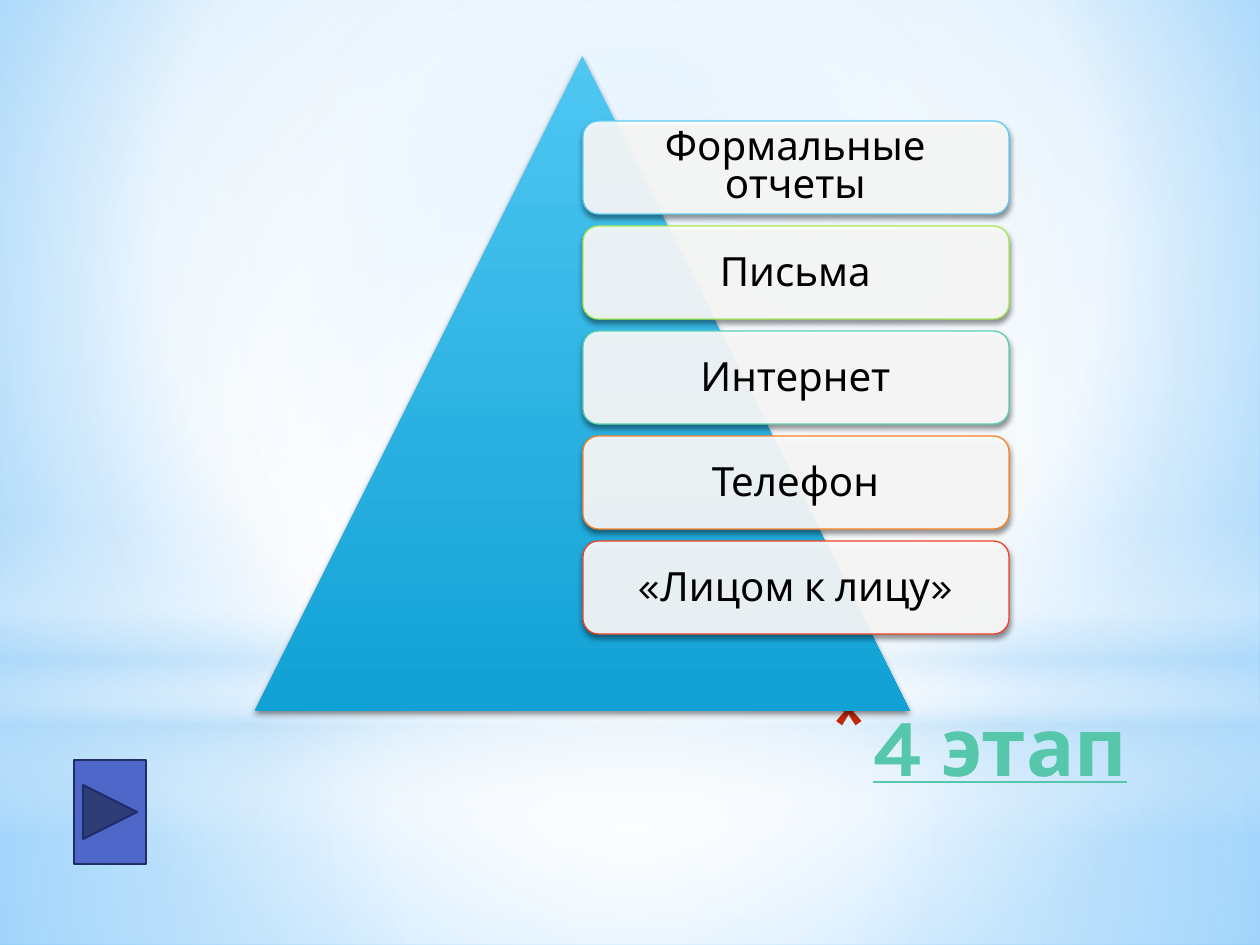
from lxml.etree import SubElement
from pptx import Presentation
from pptx.dml.color import RGBColor
from pptx.enum.shapes import MSO_SHAPE
from pptx.enum.text import MSO_ANCHOR, MSO_AUTO_SIZE, PP_ALIGN
from pptx.oxml.ns import qn
from pptx.util import Emu, Pt

WIDE, HIGH = 1260, 945
SCALE = 914400 / 126

WHITE = RGBColor(0xFF, 0xFF, 0xFF)
BLACK = RGBColor(0, 0, 0)
PALE = RGBColor(0xB4, 0xDC, 0xFA)
LIGHT = RGBColor(0x9E, 0xD5, 0xFF)
SKY = RGBColor(0x5B, 0xB9, 0xFF)
CYAN = RGBColor(0x4E, 0xC7, 0xF2)
DEEP = RGBColor(0x11, 0xA1, 0xD4)
MINT = RGBColor(0x56, 0xC7, 0xAA)
CRIMSON = RGBColor(0xC3, 0x26, 0x0C)
INDIGO = RGBColor(0x4E, 0x67, 0xC8)
NAVY = RGBColor(0x1F, 0x2E, 0x69)
AQUA = RGBColor(0x5E, 0xCC, 0xF3)
LIME = RGBColor(0xA7, 0xEA, 0x52)
TEAL = RGBColor(0x5D, 0xCE, 0xAF)
ORANGE = RGBColor(0xFF, 0x80, 0x21)
RED = RGBColor(0xF1, 0x41, 0x24)

CENTRE = (50, 50, 50, 50)


def px(count):
    return Emu(round(count * SCALE))


def add(parent, tag, **attrs):
    return SubElement(parent, qn(tag), {key: str(val) for key, val in attrs.items()})


def tint(parent, color, alpha=100):
    node = add(parent, "a:srgbClr", val=color)
    if alpha < 100:
        add(node, "a:alpha", val=alpha * 1000)


def blend(host, stops, focus=None):
    """Swap the solid fill of host for a gradient: round about focus, else downward."""
    solid = host.find(qn("a:solidFill"))
    grad = add(host, "a:gradFill", rotWithShape=1)
    host.replace(solid, grad)
    marks = add(grad, "a:gsLst")
    for place, color, alpha in stops:
        tint(add(marks, "a:gs", pos=place * 1000), color, alpha)
    if focus:
        sides = {side: part * 1000 for side, part in zip("ltrb", focus)}
        add(add(grad, "a:path", path="circle"), "a:fillToRect", **sides)
    else:
        add(grad, "a:lin", ang=90 * 60000, scaled=0)


def write(frame, text, size=23, color=BLACK, align=PP_ALIGN.CENTER, space=None,
          anchor=MSO_ANCHOR.MIDDLE, bold=False, under=False):
    frame.word_wrap = True
    frame.auto_size = MSO_AUTO_SIZE.NONE
    frame.vertical_anchor = anchor
    para = frame.paragraphs[0]
    para.alignment = align
    if space:
        para.line_spacing = space
    run = para.add_run()
    run.text = text
    font = run.font
    font.name, font.size, font.bold, font.underline = "Karla", Pt(size), bold, under
    font.color.rgb = color
    return para


class Board:
    def __init__(self, deck):
        self.slide = deck.slides.add_slide(deck.slide_layouts[5])

    def back(self, stops, focus):
        self.slide.background.fill.solid()
        blend(self.slide.element.find(".//" + qn("p:bgPr")), stops, focus)

    def shape(self, kind, box, fill=WHITE, alpha=100, stops=None, focus=None,
              line=None, width=0.75, shade=False):
        item = self.slide.shapes.add_shape(kind, *map(px, box))
        item.shadow.inherit = False
        item.fill.solid()
        item.fill.fore_color.rgb = fill
        props = item.element.spPr
        if stops:
            blend(props, stops, focus)
        elif alpha < 100:
            tone = props.find(qn("a:solidFill"))[0]
            add(tone, "a:alpha", val=alpha * 1000)
        if line is None:
            item.line.fill.background()
        else:
            item.line.color.rgb = line
            item.line.width = Pt(width)
        if shade:
            drop = add(props.find(qn("a:effectLst")), "a:outerShdw", blurRad=Pt(3.1),
                       dist=Pt(1.8), dir=90 * 60000, rotWithShape=0)
            tint(drop, BLACK, 45)

    def label(self, text, box, **style):
        frame = self.slide.shapes.add_textbox(*map(px, box)).text_frame
        frame.margin_left = frame.margin_right = px(13)
        frame.margin_top = frame.margin_bottom = px(13)
        write(frame, text, **style)

    def title(self, text, box, **style):
        item = self.slide.shapes.title
        item.left, item.top, item.width, item.height = map(px, box)
        self.slide.shapes.element.append(item.element)  # above the backdrop
        para = write(item.text_frame, text, **style)
        props = para._p.get_or_add_pPr()
        props.set("marL", str(px(44)))
        props.set("indent", str(-px(44)))
        tint(add(props, "a:buClr"), CRIMSON)
        add(props, "a:buSzPct", val=128000)
        add(props, "a:buChar", char="*")


def backdrop(board):
    board.back([(0, LIGHT, 100), (60, WHITE, 100), (100, SKY, 100)], (20, 10, 20, 60))
    rect = MSO_SHAPE.RECTANGLE
    board.shape(rect, (0, 703, WIDE, 242), focus=CENTRE,
                stops=[(0, WHITE, 91), (37, WHITE, 76), (100, PALE, 79)])
    board.shape(rect, (0, 0, WIDE, 703), focus=CENTRE,
                stops=[(0, WHITE, 89), (48, WHITE, 62), (100, PALE, 79)])
    board.shape(rect, (0, 519, WIDE, 315),
                stops=[(0, WHITE, 0), (29, WHITE, 30), (45, PALE, 40),
                       (55, WHITE, 26), (65, PALE, 60), (100, WHITE, 0)])
    board.shape(MSO_SHAPE.OVAL, (0, 221, WIDE, 703), focus=CENTRE,
                stops=[(0, WHITE, 100), (56, WHITE, 0)])


def pyramid(board):
    board.shape(MSO_SHAPE.ISOSCELES_TRIANGLE, (255, 56, 655, 655), shade=True,
                stops=[(0, CYAN, 100), (100, DEEP, 100)])
    levels = [("Формальные отчеты", AQUA, 0.8), ("Письма", LIME, 0.9),
              ("Интернет", TEAL, 0.9), ("Телефон", ORANGE, 0.9),
              ("«Лицом к лицу»", RED, 0.9)]
    for row, (text, color, space) in enumerate(levels):
        top = 121 + 105 * row
        board.shape(MSO_SHAPE.ROUNDED_RECTANGLE, (583, top, 426, 93), alpha=90,
                    line=color, shade=True)
        board.label(text, (587, top + 5, 417, 84), space=space)


def main():
    deck = Presentation()
    deck.slide_width, deck.slide_height = px(WIDE), px(HIGH)
    board = Board(deck)
    backdrop(board)
    board.title("4 этап", (243, 690, 897, 158), size=46, color=MINT, bold=True,
                under=True, align=PP_ALIGN.RIGHT, anchor=MSO_ANCHOR.TOP)
    pyramid(board)
    board.shape(MSO_SHAPE.ACTION_BUTTON_FORWARD_OR_NEXT, (74, 760, 72, 104),
                fill=INDIGO, line=NAVY, width=1.25)
    deck.save("out.pptx")


if __name__ == "__main__":
    main()
